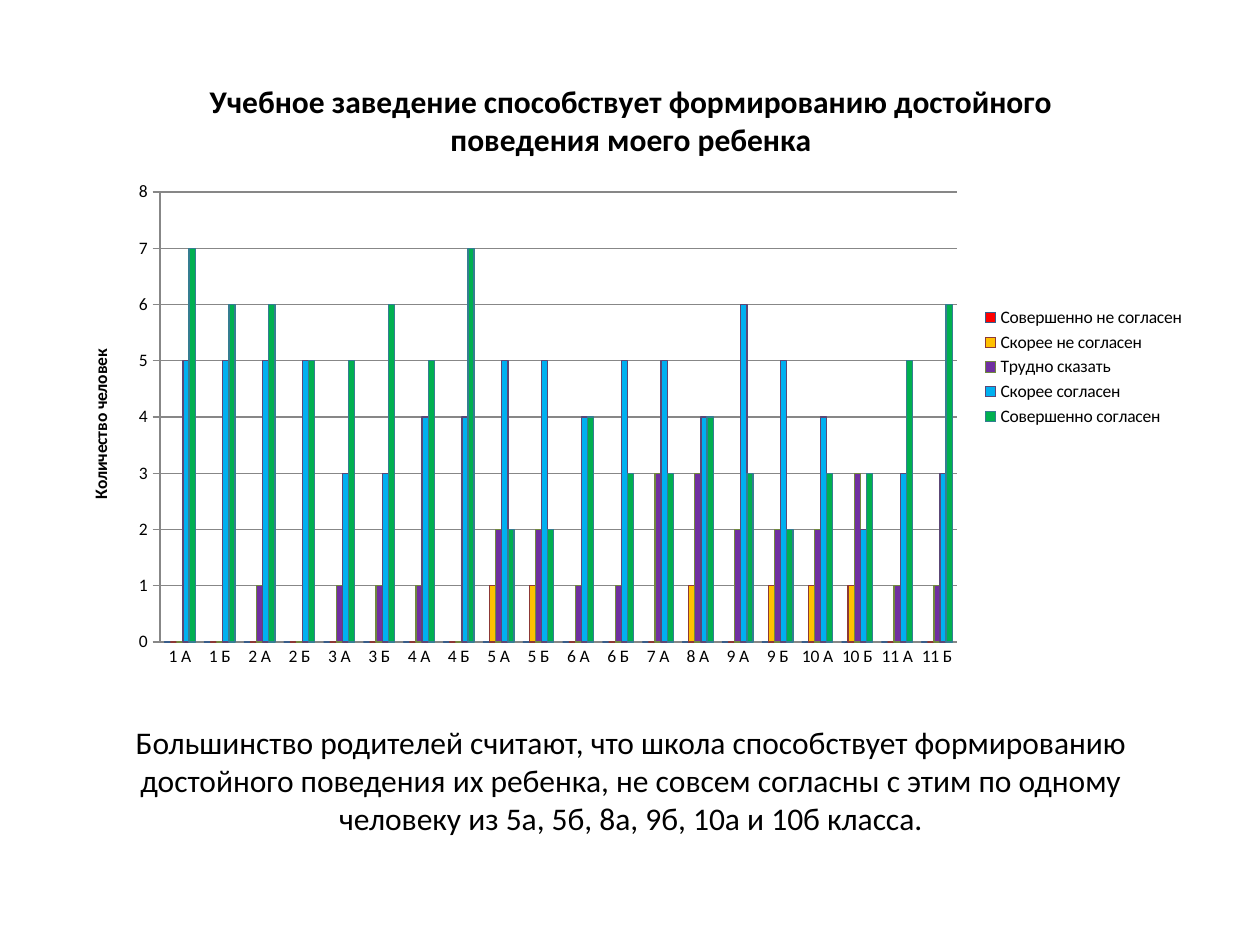
import lxml.etree
import pptx
import pptx.chart.data
import pptx.dml.color
import pptx.enum.chart
import pptx.enum.text
import pptx.oxml
import pptx.oxml.ns
import pptx.util

SCALE = 914400 / 126  # EMU in one px
FONT = "Calibri"


def px(length):
    return pptx.util.Emu(round(length * SCALE))


def color(value):
    return pptx.dml.color.RGBColor.from_string(value)


presentation = pptx.Presentation()
presentation.slide_width = px(1260)
presentation.slide_height = px(945)
slide = presentation.slides.add_slide(presentation.slide_layouts[5])

# Conclusion in the title placeholder, below the chart
title = slide.shapes.title
title.left, title.top, title.width, title.height = px(64), px(701), px(1134), px(158)
title.text_frame.word_wrap = True
title.text_frame.vertical_anchor = pptx.enum.text.MSO_ANCHOR.MIDDLE
paragraph = title.text_frame.paragraphs[0]
paragraph.alignment = pptx.enum.text.PP_ALIGN.CENTER
run = paragraph.add_run()
run.text = ("Большинство родителей считают, что школа способствует формированию "
            "достойного поведения их ребенка, не совсем согласны с этим по одному "
            "человеку из 5а, 5б, 8а, 9б, 10а и 10б класса.")
run.font.size = pptx.util.Pt(18)
run.font.name = FONT
run.font.color.rgb = color("000000")

# Answers by class: name, fill, outline, values; the last series is empty
answers = [
    ("Совершенно не согласен", "FF0000", "385D8A", [0] * 20),
    ("Скорее не согласен", "FFC000", "8C3836",
     [0, 0, 0, 0, 0, 0, 0, 0, 1, 1, 0, 0, 0, 1, 0, 1, 1, 1, 0, 0]),
    ("Трудно сказать", "7030A0", "71893F",
     [0, 0, 1, 0, 1, 1, 1, 0, 2, 2, 1, 1, 3, 3, 2, 2, 2, 3, 1, 1]),
    ("Скорее согласен", "00B0F0", "5C4776",
     [5, 5, 5, 5, 3, 3, 4, 4, 5, 5, 4, 5, 5, 4, 6, 5, 4, 2, 3, 3]),
    ("Совершенно согласен", "00B050", "357D91",
     [7, 6, 6, 5, 5, 6, 5, 7, 2, 2, 4, 3, 3, 4, 3, 2, 3, 3, 5, 6]),
    ("", "F79646", "B66D31", []),
]
chart_data = pptx.chart.data.CategoryChartData()
chart_data.categories = [
    f"{grade} {letter}" for grade in range(1, 12) for letter in "АБ"
    if (grade, letter) not in ((7, "Б"), (8, "Б"))
]
for name, fill, outline, values in answers:
    chart_data.add_series(name, values)

left, top, width, height = 64, 55, 1134, 624
chart = slide.shapes.add_chart(
    pptx.enum.chart.XL_CHART_TYPE.COLUMN_CLUSTERED,
    px(left), px(top), px(width), px(height), chart_data).chart
chart.font.size = pptx.util.Pt(10)
chart.font.name = FONT
chart.font.color.rgb = color("000000")

# Columns
plot = chart.plots[0]
plot.gap_width = 150
plot.overlap = 0
plot.vary_by_categories = False
for series, (name, fill, outline, values) in zip(plot.series, answers):
    series.format.fill.solid()
    series.format.fill.fore_color.rgb = color(fill)
    series.format.line.color.rgb = color(outline)
    series.format.line.width = pptx.util.Pt(0.75)
    if not values:  # an empty series takes no legend entry
        for tag in ("c:tx", "c:val"):
            series._element.remove(series._element.find(pptx.oxml.ns.qn(tag)))

# Axes
category_axis, value_axis = chart.category_axis, chart.value_axis
category_axis.major_tick_mark = pptx.enum.chart.XL_TICK_MARK.NONE
value_axis.major_tick_mark = pptx.enum.chart.XL_TICK_MARK.OUTSIDE
value_axis.minimum_scale = 0
value_axis.maximum_scale = 8
value_axis.major_unit = 1
value_axis.has_major_gridlines = True
for part in (category_axis, value_axis, value_axis.major_gridlines):
    part.format.line.color.rgb = color("878787")
    part.format.line.width = pptx.util.Pt(0.75)

# Chart title and axis title
value_axis.has_title = True
chart.has_title = True
for heading, text, size in (
    (chart.chart_title,
     "Учебное заведение способствует формированию достойного поведения моего ребенка", 18),
    (value_axis.axis_title, "Количество человек", 10),
):
    run = heading.text_frame.paragraphs[0].add_run()
    run.text = text
    run.font.size = pptx.util.Pt(size)
    run.font.bold = True
    run.font.name = FONT
    run.font.color.rgb = color("000000")
chart.chart_title.include_in_layout = False

# Legend
chart.has_legend = True
chart.legend.position = pptx.enum.chart.XL_LEGEND_POSITION.RIGHT
chart.legend.include_in_layout = False

# Plot area as fractions of the chart frame
plot_area = chart.element.find(".//" + pptx.oxml.ns.qn("c:plotArea"))
old_layout = plot_area.find(pptx.oxml.ns.qn("c:layout"))
if old_layout is not None:
    plot_area.remove(old_layout)
layout = pptx.oxml.parse_xml(f"<c:layout {pptx.oxml.ns.nsdecls('c')}/>")
plot_area.insert(0, layout)
manual = lxml.etree.SubElement(layout, pptx.oxml.ns.qn("c:manualLayout"))
for tag, value in (("layoutTarget", "inner"), ("xMode", "edge"), ("yMode", "edge"),
                   ("x", (160 - left) / width), ("y", (192 - top) / height),
                   ("w", 797 / width), ("h", 450 / height)):
    lxml.etree.SubElement(manual, pptx.oxml.ns.qn("c:" + tag)).set("val", str(value))

presentation.save("out.pptx")
